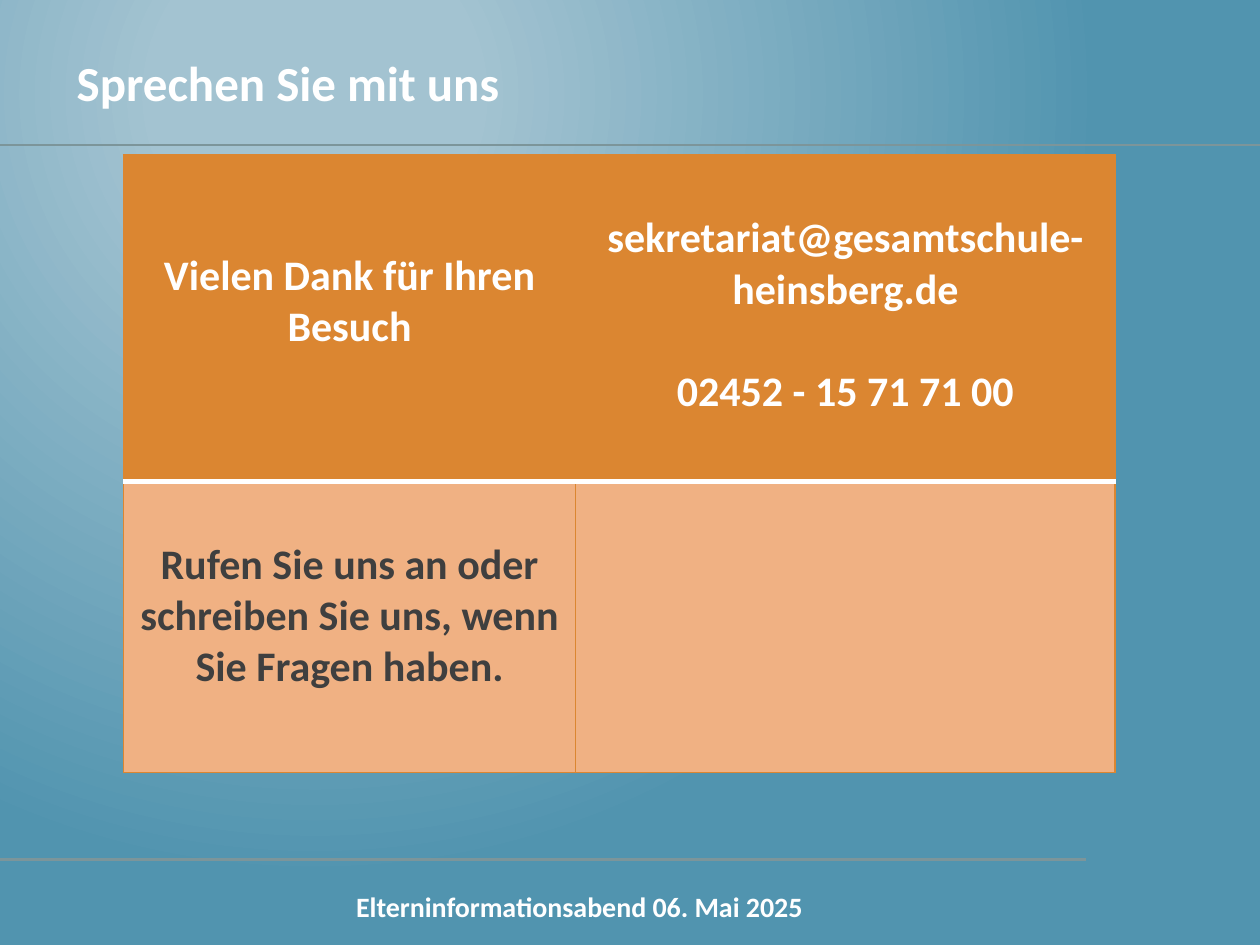
from lxml import etree
from pptx import Presentation
from pptx import util as u
from pptx.dml.color import RGBColor
from pptx.enum import shapes, text
from pptx.oxml import ns

COLORS = {
    "glow": "A3C3D1",
    "water": "5194AF",
    "rule": "7C959A",
    "white": "FFFFFF",
    "orange": "DB8631",
    "peach": "F0B183",
    "dark": "3F3F3F",
}
COLUMNS = (3.59, 4.28)
ROWS = (2.59, 2.31)


def rgb(name):
    return RGBColor.from_string(COLORS[name])


def add_xml(parent, tag, **attributes):
    return etree.SubElement(parent, ns.qn(tag), attributes)


def style_paragraph(paragraph, size, color, align):
    paragraph.alignment = align
    formats = {"name": "Calibri", "size": u.Pt(size), "bold": True}
    for key, value in formats.items():
        setattr(paragraph.font, key, value)
    paragraph.font.color.rgb = rgb(color)


def paint_background(slide):
    fill = slide.background.fill
    fill.gradient()
    for stop, position, color in zip(fill.gradient_stops, (0.2, 1), ("glow", "water")):
        stop.position = position
        stop.color.rgb = rgb(color)
    gradient = slide.element.find(".//" + ns.qn("a:gradFill"))
    gradient.remove(gradient.find(ns.qn("a:lin")))
    circle = add_xml(gradient, "a:path", path="circle")
    add_xml(circle, "a:fillToRect", l="50000", t="20000", r="100000", b="100000")


def add_rule(slide, top, right, width):
    rule = slide.shapes.add_connector(
        shapes.MSO_CONNECTOR.STRAIGHT, 0, u.Inches(top), u.Inches(right), u.Inches(top)
    )
    rule.line.color.rgb = rgb("rule")
    rule.line.width = u.Pt(width)
    add_xml(rule.element.spPr, "a:effectLst")


def add_label(slide, box, words, size, align):
    frame = slide.shapes.add_textbox(*map(u.Inches, box)).text_frame
    frame.word_wrap = True
    frame.text = words
    style_paragraph(frame.paragraphs[0], size, "white", align)


def add_border(cell, side, color, width):
    properties = cell._tc.get_or_add_tcPr()
    line = etree.Element(ns.qn("a:" + side), {"w": str(u.Pt(width))})
    fill = add_xml(line, "a:solidFill")
    add_xml(fill, "a:srgbClr", val=COLORS[color])
    borders = [child for child in properties if etree.QName(child).localname.startswith("ln")]
    properties.insert(len(borders), line)


def fill_cell(cell, lines, top_margin, fill, color):
    cell.fill.solid()
    cell.fill.fore_color.rgb = rgb(fill)
    cell.margin_top = u.Inches(top_margin)
    cell.text = "\n".join(lines)
    for index, paragraph in enumerate(cell.text_frame.paragraphs):
        style_paragraph(paragraph, 24, color, text.PP_ALIGN.CENTER)
        if index:
            paragraph.space_before = u.Pt(29.3)


def add_contact_table(slide):
    contact = slide.shapes.add_table(
        2, 2, *map(u.Inches, (0.98, 1.23, sum(COLUMNS), sum(ROWS)))
    ).table
    for column, width in zip(contact.columns, COLUMNS):
        column.width = u.Inches(width)
    for row, height in zip(contact.rows, ROWS):
        row.height = u.Inches(height)

    thanks = ["Vielen Dank für Ihren Besuch"]
    address = ["sekretariat@gesamtschule-heinsberg.de", "02452 - 15 71 71 00"]
    invitation = ["Rufen Sie uns an oder schreiben Sie uns, wenn Sie Fragen haben."]
    fill_cell(contact.cell(0, 0), thanks, 0.76, "orange", "white")
    fill_cell(contact.cell(0, 1), address, 0.46, "orange", "white")
    fill_cell(contact.cell(1, 0), invitation, 0.46, "peach", "dark")
    fill_cell(contact.cell(1, 1), [], 0.05, "peach", "dark")

    divider = {(0, "lnB"), (1, "lnT")}
    for row_index, row in enumerate(contact.rows):
        for cell in row.cells:
            for side in ("lnL", "lnR", "lnT", "lnB"):
                is_divider = (row_index, side) in divider
                add_border(cell, side, *(("white", 3) if is_divider else ("orange", 0.75)))


def main():
    deck = Presentation()
    deck.slide_width, deck.slide_height = u.Inches(10), u.Inches(7.5)
    slide = deck.slides.add_slide(deck.slide_layouts[6])
    paint_background(slide)
    add_label(slide, (0.98, 7.01, 7.24, 0.64), "Elterninformationsabend 06. Mai 2025",
              16, text.PP_ALIGN.CENTER)
    add_rule(slide, 6.82, 8.62, 1.5)
    add_rule(slide, 1.15, 10, 0.75)
    add_label(slide, (0.51, 0.37, 9.69, 0.57), "Sprechen Sie mit uns", 28, text.PP_ALIGN.LEFT)
    add_contact_table(slide)
    deck.save("out.pptx")


if __name__ == "__main__":
    main()
